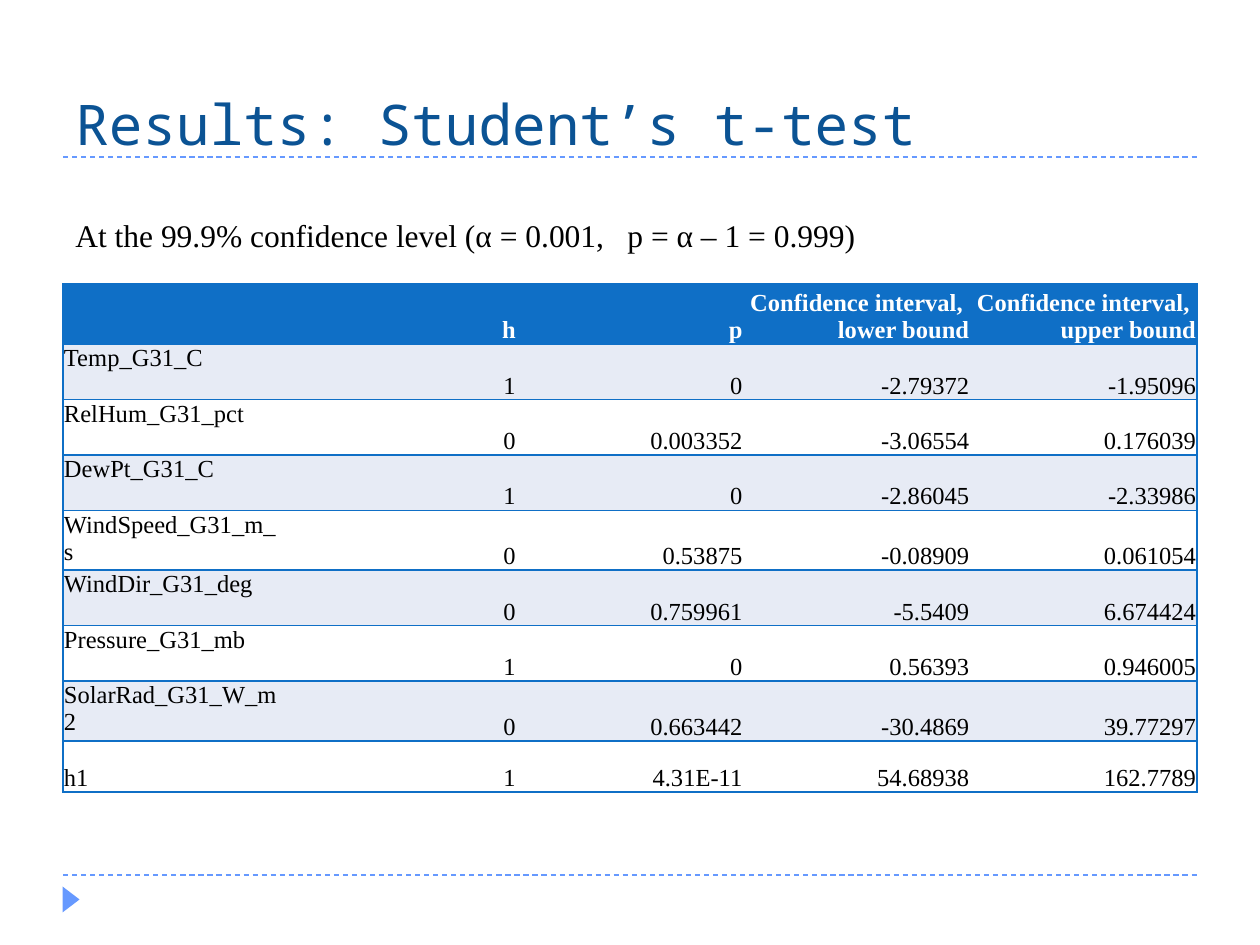
"""Build the slide with the Student's t-test results table."""
from lxml.etree import SubElement
from pptx import Presentation
from pptx.dml.color import RGBColor
from pptx.enum.dml import MSO_LINE
from pptx.enum.shapes import MSO_CONNECTOR, MSO_SHAPE
from pptx.enum.text import MSO_ANCHOR, PP_ALIGN
from pptx.oxml.ns import qn
from pptx.util import Emu, Pt

COLORS = {
    "title": "0B5394", "accent": "6699FF", "table": "0F6FC6",
    "band": "E7EBF5", "white": "FFFFFF", "black": "000000",
}
SERIF = "Times New Roman"
TITLE = "Results: Student’s t-test"
SUBTITLE = "At the 99.9% confidence level (α = 0.001,\tp = α – 1 = 0.999)"
ROWS = [
    ("", "h", "p", "Confidence interval, \nlower bound", "Confidence interval, \nupper bound"),
    ("Temp_G31_C", "1", "0", "-2.79372", "-1.95096"),
    ("RelHum_G31_pct", "0", "0.003352", "-3.06554", "0.176039"),
    ("DewPt_G31_C", "1", "0", "-2.86045", "-2.33986"),
    ("WindSpeed_G31_m_s", "0", "0.53875", "-0.08909", "0.061054"),
    ("WindDir_G31_deg", "0", "0.759961", "-5.5409", "6.674424"),
    ("Pressure_G31_mb", "1", "0", "0.56393", "0.946005"),
    ("SolarRad_G31_W_m2", "0", "0.663442", "-30.4869", "39.77297"),
    ("h1", "1", "4.31E-11", "54.68938", "162.7789"),
]
LEFT, WIDTH = 63, 1134
RULES = (157, 875)
TABLE_TOP, UPPER_HEIGHT, LAST_HEIGHT = 284, 444, 51
TAB_STOP = 552


def px(length):
    return Emu(round(length * 914400 / 126))


def color(name):
    return RGBColor.from_string(COLORS[name])


def write(frame, text, font=SERIF, size=14, ink="black", bold=False,
          align=PP_ALIGN.LEFT, anchor=MSO_ANCHOR.TOP):
    frame.word_wrap = True
    frame.vertical_anchor = anchor
    for index, line in enumerate(text.split("\n")):
        para = frame.paragraphs[0] if index == 0 else frame.add_paragraph()
        para.alignment = align
        span = para.add_run()
        span.text = line
        span.font.name, span.font.size, span.font.bold = font, Pt(size), bold
        span.font.color.rgb = color(ink)


def add_rule(page, top):
    rule = page.shapes.add_connector(
        MSO_CONNECTOR.STRAIGHT, px(LEFT), px(top), px(LEFT + WIDTH), px(top))
    rule.line.color.rgb = color("accent")
    rule.line.width = Pt(0.75)
    rule.line.dash_style = MSO_LINE.DASH
    SubElement(rule._element.spPr, qn("a:effectLst"))


def set_borders(cell, visible):
    properties = cell._tc.get_or_add_tcPr()
    for side in "LRTB":
        border = SubElement(properties, qn(f"a:ln{side}"), w=str(Pt(1)))
        if side in visible:
            fill = SubElement(border, qn("a:solidFill"))
            SubElement(fill, qn("a:srgbClr"), val=COLORS["table"])
        else:
            SubElement(border, qn("a:noFill"))


def add_results(page):
    last_row, last_column = len(ROWS) - 1, len(ROWS[0]) - 1
    table = page.shapes.add_table(
        len(ROWS), len(ROWS[0]), px(LEFT), px(TABLE_TOP), px(WIDTH),
        px(UPPER_HEIGHT + LAST_HEIGHT)).table
    for column in table.columns:
        column.width = px(WIDTH / len(ROWS[0]))
    for r, values in enumerate(ROWS):
        table.rows[r].height = px(LAST_HEIGHT if r == last_row else UPPER_HEIGHT / last_row)
        fill = "table" if r == 0 else "band" if r % 2 else "white"
        for c, value in enumerate(values):
            cell = table.cell(r, c)
            set_borders(cell, "TB" + "L" * (c == 0) + "R" * (c == last_column))
            cell.fill.solid()
            cell.fill.fore_color.rgb = color(fill)
            cell.margin_left = cell.margin_top = px(1)
            cell.margin_right = px(1 if c else 8)
            cell.margin_bottom = 0
            top_label = c == 0 and r < last_row
            write(cell.text_frame, value, bold=r == 0, ink="black" if r else "white",
                  align=PP_ALIGN.RIGHT if c else PP_ALIGN.LEFT)
            cell.vertical_anchor = MSO_ANCHOR.TOP if top_label else MSO_ANCHOR.BOTTOM


def main():
    deck = Presentation()
    deck.slide_width, deck.slide_height = px(1260), px(945)
    page = deck.slides.add_slide(deck.slide_layouts[6])
    for top in RULES:
        add_rule(page, top)

    marker = page.shapes.add_shape(
        MSO_SHAPE.ISOSCELES_TRIANGLE, px(58), px(891), px(26), px(17))
    marker.rotation = 90
    marker.shadow.inherit = False
    marker.fill.solid()
    marker.fill.fore_color.rgb = color("accent")
    marker.line.fill.background()

    title = page.shapes.add_textbox(px(LEFT), px(21), px(WIDTH), px(136))
    title.text_frame.margin_bottom = 0
    write(title.text_frame, TITLE, font="Noto Sans Mono", size=32, ink="title",
          anchor=MSO_ANCHOR.BOTTOM)

    add_results(page)

    subtitle = page.shapes.add_textbox(px(LEFT), px(210), px(914), px(50))
    write(subtitle.text_frame, SUBTITLE, size=18)
    tabs = SubElement(subtitle.text_frame.paragraphs[0]._p.get_or_add_pPr(), qn("a:tabLst"))
    SubElement(tabs, qn("a:tab"), pos=str(px(TAB_STOP)), algn="l")

    deck.save("out.pptx")


if __name__ == "__main__":
    main()
